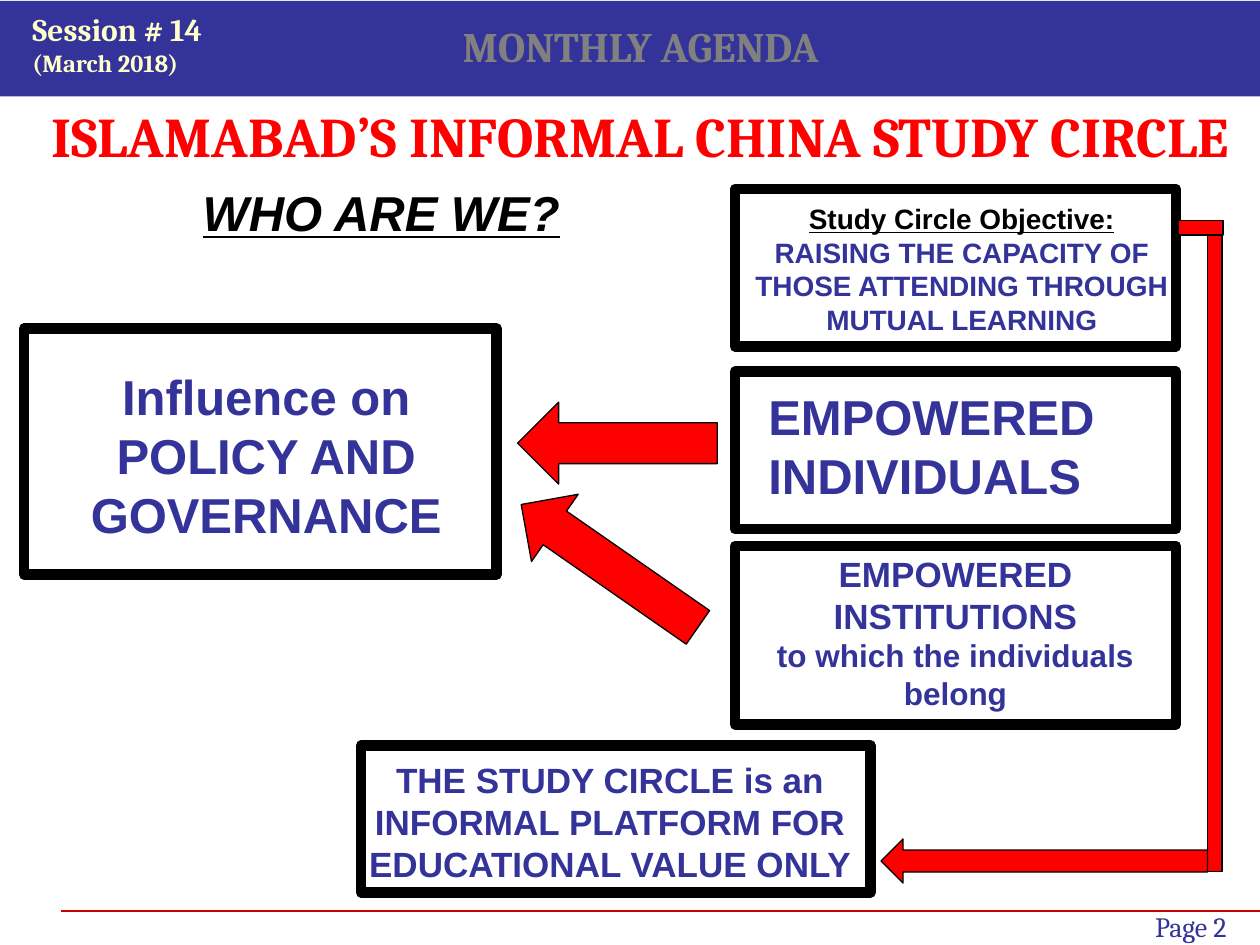
from dataclasses import dataclass
from typing import NamedTuple

from lxml import etree
from pptx import Presentation
from pptx.dml.color import RGBColor
from pptx.enum.shapes import MSO_CONNECTOR, MSO_SHAPE
from pptx.enum.text import MSO_ANCHOR, PP_ALIGN
from pptx.oxml.ns import qn
from pptx.util import Emu, Inches, Pt


@dataclass(frozen=True)
class Theme:
    navy: str = "333399"
    red: str = "FF0000"
    rule: str = "CC0000"
    black: str = "000000"
    grey: str = "808080"
    cream: str = "FFFFCC"
    serif: str = "Cambria"
    sans: str = "Arial"
    title: int = 32
    heading: int = 28
    agenda: int = 24
    label: int = 20
    session: int = 18
    small: int = 16
    date: int = 14
    frame: float = 6
    outline: float = 0.75


class Place(NamedTuple):
    """Columns and rows on a grid of 120 by 90 cells."""
    col: float
    row: float
    cols: float
    rows: float


class Span(NamedTuple):
    text: str
    size: int
    color: str
    font: str = Theme.sans
    bold: bool = True
    italic: bool = False
    underline: bool = False


class Label(NamedTuple):
    place: Place
    lines: list[Span]
    align: PP_ALIGN = PP_ALIGN.CENTER


class Arrow(NamedTuple):
    place: Place
    rotation: float = 180


THEME = Theme()
CELL = Inches(10) // 120

BAND = Place(0, 0.1, 120, 9.1)
TITLE = Label(Place(0, 9.1, 122, 7.7), [
    Span("ISLAMABAD’S INFORMAL CHINA STUDY CIRCLE", THEME.title, THEME.red, THEME.serif)])
SESSION = Label(Place(1.9, 0.4, 31.1, 7.7), [
    Span("Session # 14", THEME.session, THEME.cream, THEME.serif),
    Span("(March 2018)", THEME.date, THEME.cream, THEME.serif)], PP_ALIGN.LEFT)
AGENDA = Label(Place(39, 1.4, 44, 6), [
    Span("MONTHLY AGENDA", THEME.agenda, THEME.grey, THEME.serif)])
PAGE_NUMBER = Label(Place(90, 86, 28, 6.2), [
    Span("Page 2", THEME.small, THEME.navy, THEME.serif, bold=False)], PP_ALIGN.RIGHT)

FRAMES = [
    Place(70, 18, 42, 15),
    Place(70, 35.4, 42, 15),
    Place(70, 52, 42, 17),
    Place(34.4, 71, 48.5, 14),
    Place(2.3, 31.3, 45, 23.4),
]
ARROWS = [
    Arrow(Place(47.8, 50, 20.5, 7.8), 214.8),
    Arrow(Place(49.3, 38.3, 19, 7.8)),
    Arrow(Place(83.9, 79.9, 31.1, 4.2)),
]
BARS = [Place(115, 21, 1.4, 62), Place(112.2, 21, 4.3, 1.4)]
LABELS = [
    Label(Place(14.5, 16.8, 43.6, 6.8), [
        Span("WHO ARE WE?", THEME.heading, THEME.black, italic=True, underline=True)]),
    Label(Place(70.6, 18.6, 42, 14.2), [
        Span("Study Circle Objective:", THEME.small, THEME.black, underline=True),
        Span("RAISING THE CAPACITY OF THOSE ATTENDING THROUGH MUTUAL LEARNING",
             THEME.small, THEME.navy)]),
    Label(Place(72, 36.2, 42, 12.5), [
        Span("EMPOWERED INDIVIDUALS", THEME.heading, THEME.navy)], PP_ALIGN.LEFT),
    Label(Place(70, 52, 42, 16.6), [
        Span("EMPOWERED INSTITUTIONS", THEME.label, THEME.navy),
        Span("to which the individuals belong", THEME.session, THEME.navy)]),
    Label(Place(31.8, 71.6, 52.6, 13.3), [
        Span("THE STUDY CIRCLE is an", THEME.label, THEME.navy),
        Span("INFORMAL PLATFORM FOR EDUCATIONAL VALUE ONLY", THEME.label, THEME.navy)]),
    Label(Place(2.3, 34.3, 46.1, 18.1), [
        Span("Influence on POLICY AND GOVERNANCE", THEME.heading, THEME.navy)]),
]


def on_grid(place: Place) -> list[Emu]:
    return [Emu(round(cells * CELL)) for cells in place]


def fill_text(box, label: Label) -> None:
    frame = box.text_frame
    for name, value in {"word_wrap": True, "vertical_anchor": MSO_ANCHOR.TOP}.items():
        setattr(frame, name, value)
    for index, span in enumerate(label.lines):
        para = frame.add_paragraph() if index else frame.paragraphs[0]
        para.alignment = label.align
        run = para.add_run()
        run.text = span.text
        formats = {"size": Pt(span.size), "name": span.font, "bold": span.bold,
                   "italic": span.italic, "underline": span.underline}
        for name, value in formats.items():
            setattr(run.font, name, value)
        run.font.color.rgb = RGBColor.from_string(span.color)


def add_label(page, label: Label) -> None:
    fill_text(page.shapes.add_textbox(*on_grid(label.place)), label)


def add_block(page, place: Place, fill: str | None = None, line: float = 0,
              kind: MSO_SHAPE = MSO_SHAPE.RECTANGLE, rotation: float = 0) -> None:
    """Draw a preset shape; no fill or a zero line width leaves that part clear."""
    block = page.shapes.add_shape(kind, *on_grid(place))
    block.shadow.inherit = False
    block.rotation = rotation
    if fill:
        block.fill.solid()
        block.fill.fore_color.rgb = RGBColor.from_string(fill)
    else:
        block.fill.background()
    if line:
        block.line.width = Pt(line)
        block.line.color.rgb = RGBColor.from_string(THEME.black)
    else:
        block.line.fill.background()


def add_footer_rule(page) -> None:
    left, top, width, height = on_grid(Place(5.8, 86.8, 114.2, 0))
    rule = page.shapes.add_connector(MSO_CONNECTOR.STRAIGHT, left, top, left + width, top + height)
    rule.line.width = Pt(1)
    rule.line.color.rgb = RGBColor.from_string(THEME.rule)
    etree.SubElement(rule._element.spPr, qn("a:effectLst"))


def add_title(page) -> None:
    title = page.shapes.title
    for name, value in zip(("left", "top", "width", "height"), on_grid(TITLE.place)):
        setattr(title, name, value)
    fill_text(title, TITLE)


def main() -> None:
    deck = Presentation()
    deck.slide_width, deck.slide_height = Inches(10), Inches(7.5)
    page = deck.slides.add_slide(deck.slide_layouts[5])
    add_block(page, BAND, THEME.navy)
    add_footer_rule(page)
    add_title(page)
    for label in (PAGE_NUMBER, AGENDA, SESSION):
        add_label(page, label)
    for place in FRAMES:
        add_block(page, place, line=THEME.frame)
    for label in LABELS:
        add_label(page, label)
    for place in BARS:
        add_block(page, place, THEME.red, THEME.outline)
    for arrow in ARROWS:
        add_block(page, arrow.place, THEME.red, THEME.outline,
                  MSO_SHAPE.RIGHT_ARROW, arrow.rotation)
    deck.save("out.pptx")


if __name__ == "__main__":
    main()
